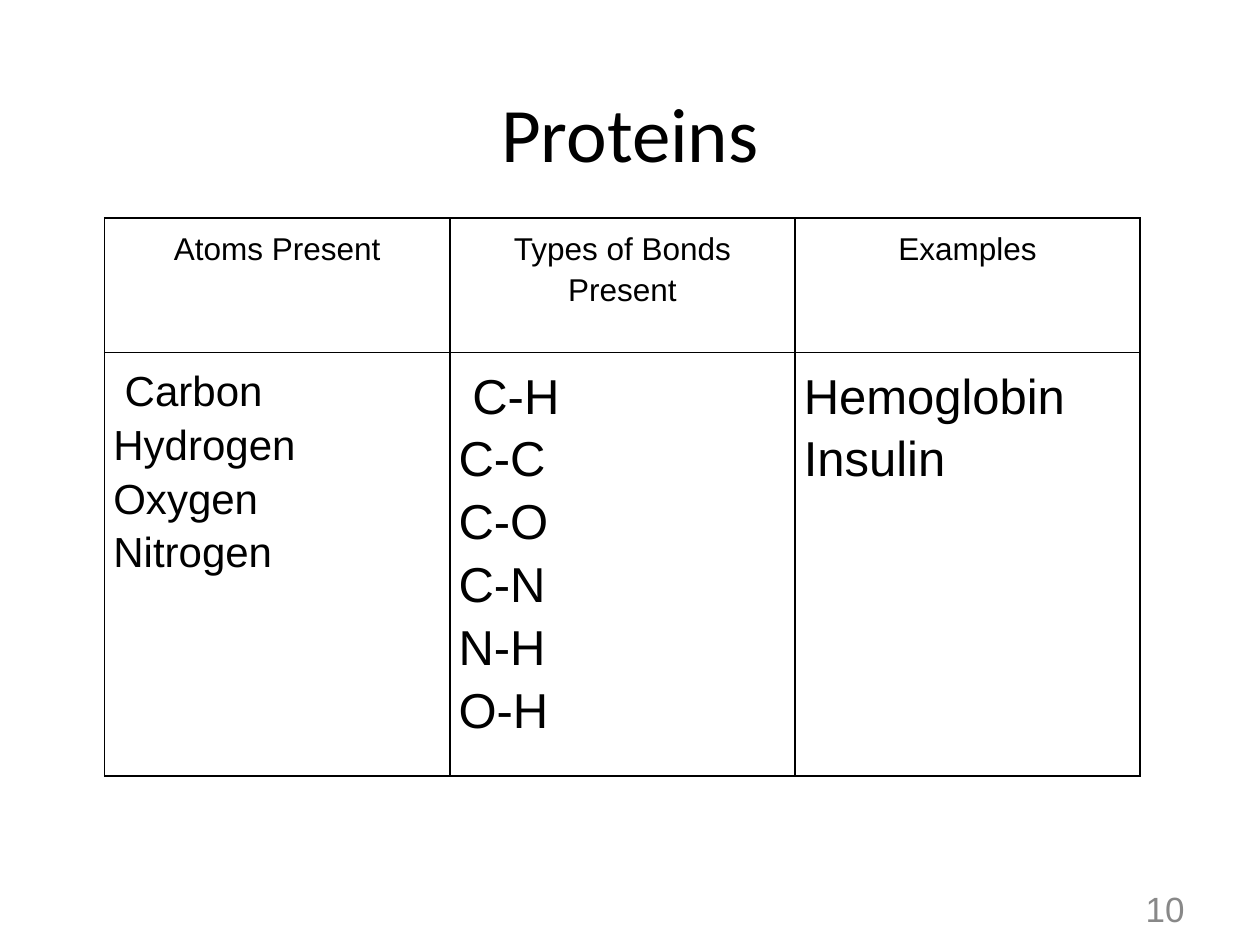
"""Build a slide that tabulates the atoms, bonds and examples of proteins."""
from dataclasses import dataclass

from lxml import etree
from pptx import Presentation
from pptx import util as u
from pptx.dml.color import RGBColor
from pptx.enum import text
from pptx.oxml.ns import qn

TITLE = "Proteins"
PAGE_NUMBER = "10"
COLUMNS = [
    ("Atoms Present", 24, ["Carbon", "Hydrogen", "Oxygen", "Nitrogen"], 0.09),
    ("Types of Bonds Present", 28, ["C-H", "C-C", "C-O", "C-N", "N-H", "O-H"], 0.11),
    ("Examples", 28, ["Hemoglobin", "Insulin"], 0),
]
TABLE_LEFT, TABLE_TOP = 0.83, 1.73
COLUMN_WIDTH = 2.74
ROW_HEIGHTS = [1.07, 2.92]
CELL_MARGIN = 0.07


@dataclass(frozen=True)
class Theme:
    ink: str = "000000"
    muted: str = "888888"
    title_font: str = "Calibri"
    body_font: str = "Arial"
    title_size: int = 44
    header_size: int = 18
    number_size: int = 20
    border_width: int = 1
    line_spacing: float = 1.15


THEME = Theme()


def format_paragraph(paragraph, size, font, color, alignment):
    paragraph.alignment = alignment
    for run in paragraph.runs:
        run.font.size = u.Pt(size)
        run.font.name = font
        run.font.color.rgb = RGBColor.from_string(color)


def add_borders(cell):
    properties = cell._tc.get_or_add_tcPr()
    for side in ("lnL", "lnR", "lnT", "lnB"):
        line = etree.SubElement(
            properties, qn(f"a:{side}"), w=str(u.Pt(THEME.border_width)))
        fill = etree.SubElement(line, qn("a:solidFill"))
        etree.SubElement(fill, qn("a:srgbClr"), val=THEME.ink)


def fill_cell(cell, lines, size, alignment, first_indent=0):
    add_borders(cell)
    cell.fill.background()
    cell.margin_left = cell.margin_right = u.Inches(CELL_MARGIN)
    cell.margin_top = cell.margin_bottom = u.Inches(CELL_MARGIN)
    cell.text_frame.text = "\n".join(lines)
    for paragraph in cell.text_frame.paragraphs:
        format_paragraph(paragraph, size, THEME.body_font, THEME.ink, alignment)
        paragraph.line_spacing = THEME.line_spacing
    if first_indent:
        properties = cell.text_frame.paragraphs[0]._p.get_or_add_pPr()
        properties.set("marL", "0")
        properties.set("indent", str(u.Inches(first_indent)))


def add_title(slide):
    title = slide.shapes.title
    title.left, title.top = u.Inches(0.5), u.Inches(0.5)
    title.width, title.height = u.Inches(9), u.Inches(1.09)
    title.text_frame.text = TITLE
    title.text_frame.vertical_anchor = text.MSO_ANCHOR.MIDDLE
    format_paragraph(title.text_frame.paragraphs[0], THEME.title_size,
                     THEME.title_font, THEME.ink, text.PP_ALIGN.CENTER)


def add_page_number(slide):
    box = slide.shapes.add_textbox(
        u.Inches(7.17), u.Inches(7.01), u.Inches(2.33), u.Inches(0.4))
    frame = box.text_frame
    frame.word_wrap = True
    frame.vertical_anchor = text.MSO_ANCHOR.MIDDLE
    frame.text = PAGE_NUMBER
    format_paragraph(frame.paragraphs[0], THEME.number_size,
                     THEME.body_font, THEME.muted, text.PP_ALIGN.RIGHT)


def add_protein_table(slide):
    table = slide.shapes.add_table(
        len(ROW_HEIGHTS), len(COLUMNS), u.Inches(TABLE_LEFT), u.Inches(TABLE_TOP),
        u.Inches(COLUMN_WIDTH * len(COLUMNS)), u.Inches(sum(ROW_HEIGHTS))).table
    table.first_row = table.horz_banding = False
    for row, height in zip(table.rows, ROW_HEIGHTS):
        row.height = u.Inches(height)
    for index, (header, size, entries, indent) in enumerate(COLUMNS):
        table.columns[index].width = u.Inches(COLUMN_WIDTH)
        fill_cell(table.cell(0, index), [header], THEME.header_size,
                  text.PP_ALIGN.CENTER)
        fill_cell(table.cell(1, index), entries, size, text.PP_ALIGN.LEFT, indent)


def main():
    presentation = Presentation()
    presentation.slide_width, presentation.slide_height = u.Inches(10), u.Inches(7.5)
    slide = presentation.slides.add_slide(presentation.slide_layouts[5])
    add_title(slide)
    add_page_number(slide)
    add_protein_table(slide)
    presentation.save("out.pptx")


if __name__ == "__main__":
    main()
